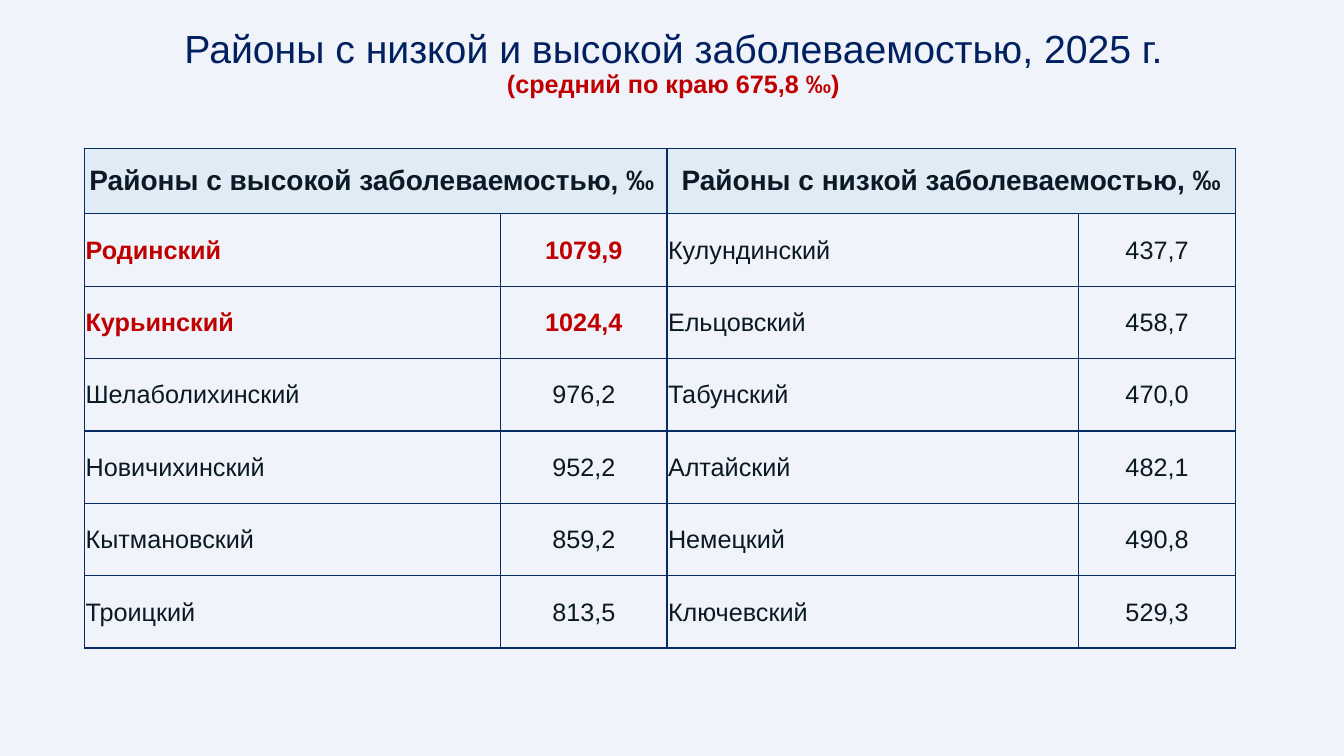
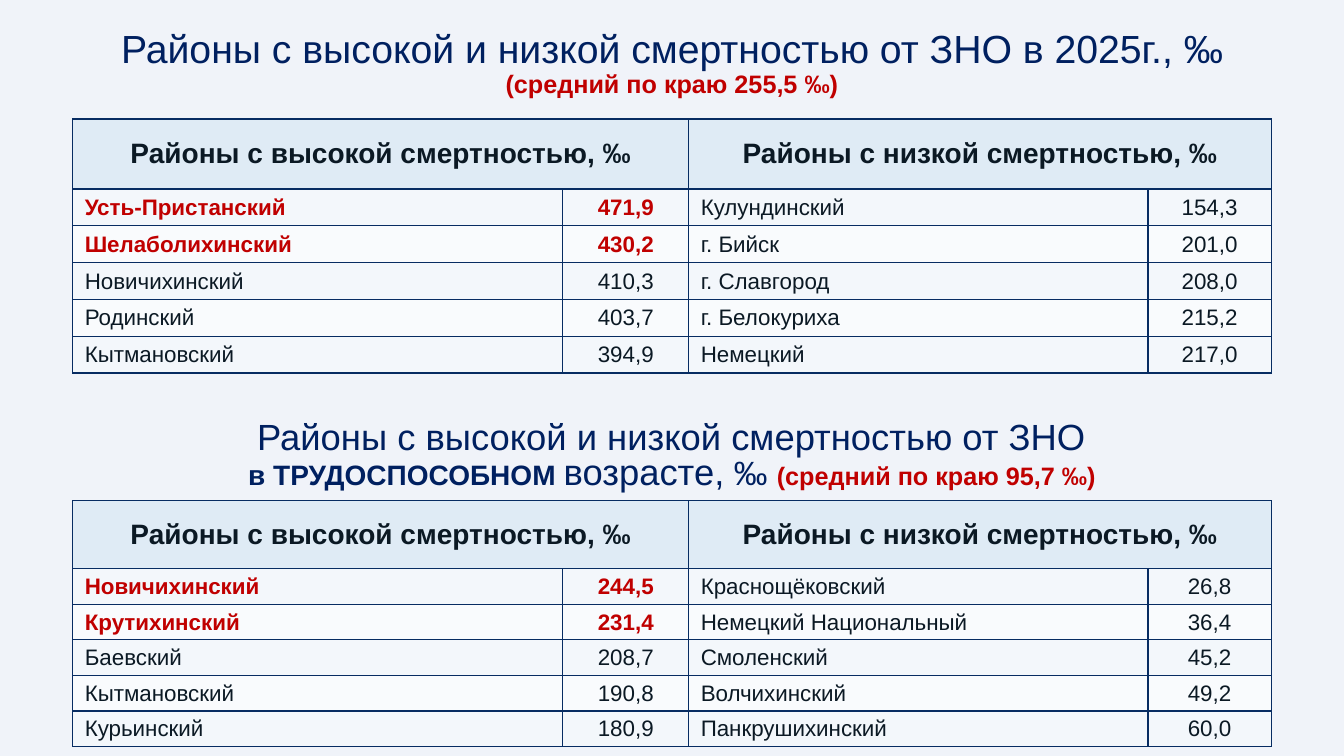
from lxml import etree
from pptx import Presentation
from pptx.dml.color import RGBColor
from pptx.enum.text import MSO_ANCHOR, MSO_AUTO_SIZE, PP_ALIGN
from pptx.oxml.ns import qn
from pptx.util import Pt

CENTER, LEFT = PP_ALIGN.CENTER, PP_ALIGN.LEFT
MIDDLE, TOP = MSO_ANCHOR.MIDDLE, MSO_ANCHOR.TOP
NO_AUTOFIT = MSO_AUTO_SIZE.NONE
TITLE_ONLY = 5

FONT = "Arial"
BACKGROUND, NAVY, RED, INK = "F0F3F9", "002060", "C00000", "0B1924"
BORDER, HEADER_FILL = "072C62", "DFEBF5"
BANDS = ("F3F7FB", "F9FBFD")
HIGHLIGHTED_ROWS = 2

TITLE = {"size": Pt(28), "bold": False, "color": NAVY}
SUBTITLE = {"size": Pt(18), "bold": True, "color": RED}
HEADER = {"size": Pt(20), "bold": True, "color": INK}

INCIDENCE_COLUMNS = (297, 119, 294, 112)
MORTALITY_COLUMNS = (350, 90, 328, 88)
MORTALITY_HEADERS = ("Районы с высокой смертностью, ‰", "Районы с низкой смертностью, ‰")

INCIDENCE = (
    ("Родинский", "1079,9", "Кулундинский", "437,7"),
    ("Курьинский", "1024,4", "Ельцовский", "458,7"),
    ("Шелаболихинский", "976,2", "Табунский", "470,0"),
    ("Новичихинский", "952,2", "Алтайский", "482,1"),
    ("Кытмановский", "859,2", "Немецкий", "490,8"),
    ("Троицкий", "813,5", "Ключевский", "529,3"),
)
MORTALITY = (
    ("Усть-Пристанский", "471,9", "Кулундинский", "154,3"),
    ("Шелаболихинский", "430,2", "г. Бийск", "201,0"),
    ("Новичихинский", "410,3", "г. Славгород", "208,0"),
    ("Родинский", "403,7", "г. Белокуриха", "215,2"),
    ("Кытмановский", "394,9", "Немецкий", "217,0"),
)
WORKING_AGE_MORTALITY = (
    ("Новичихинский", "244,5", "Краснощёковский", "26,8"),
    ("Крутихинский", "231,4", "Немецкий Национальный", "36,4"),
    ("Баевский", "208,7", "Смоленский", "45,2"),
    ("Кытмановский", "190,8", "Волчихинский", "49,2"),
    ("Курьинский", "180,9", "Панкрушихинский", "60,0"),
)


def set_color(color_format, value):
    """Apply a hex colour to a font or fill colour."""
    color_format.rgb = RGBColor.from_string(value)


def set_attributes(target, values):
    """Set each named attribute on the target."""
    for name, value in values.items():
        setattr(target, name, value)


def add_run(paragraph, text, style):
    """Append a run in the given style."""
    run = paragraph.add_run()
    run.text = text
    values = {"name": FONT, **style}
    set_color(run.font.color, values.pop("color"))
    set_attributes(run.font, values)


def add_title(slide, left, width, text, subtitle):
    """Place the title with its red regional average below."""
    shape = slide.shapes.title
    set_attributes(shape, {"left": Pt(left), "top": Pt(15), "width": Pt(width), "height": Pt(68)})
    set_attributes(shape.text_frame, {
        "word_wrap": True, "auto_size": NO_AUTOFIT,
        "vertical_anchor": TOP, "margin_top": Pt(6),
    })
    paragraph = shape.text_frame.paragraphs[0]
    set_attributes(paragraph, {"alignment": CENTER, "line_spacing": 0.9})
    add_run(paragraph, text, TITLE)
    paragraph.add_line_break()
    add_run(paragraph, subtitle, SUBTITLE)


def add_heading(slide, left, top, width, height, lines):
    """Add a centred heading whose lines are lists of styled runs."""
    frame = slide.shapes.add_textbox(Pt(left), Pt(top), Pt(width), Pt(height)).text_frame
    set_attributes(frame, {"word_wrap": True, "vertical_anchor": MIDDLE})
    for index, runs in enumerate(lines):
        paragraph = frame.add_paragraph() if index else frame.paragraphs[0]
        set_attributes(paragraph, {"alignment": CENTER, "line_spacing": 0.79})
        for text, style in runs:
            add_run(paragraph, text, style)


def set_borders(cell):
    """Draw a thin border on all four sides of a cell."""
    properties = cell._tc.get_or_add_tcPr()
    for index, side in enumerate(("lnL", "lnR", "lnT", "lnB")):
        line = etree.Element(qn(f"a:{side}"), w=str(Pt(1)))
        fill = etree.SubElement(line, qn("a:solidFill"))
        etree.SubElement(fill, qn("a:srgbClr"), val=BORDER)
        properties.insert(index, line)


def format_cell(cell, fill, margins):
    """Set fill, margins, anchor and borders of a cell."""
    if fill:
        cell.fill.solid()
        set_color(cell.fill.fore_color, fill)
    else:
        cell.fill.background()
    sides = ("margin_left", "margin_top", "margin_right", "margin_bottom")
    set_attributes(cell, dict(zip(sides, map(Pt, margins))))
    cell.vertical_anchor = MIDDLE
    set_borders(cell)


def write_cell(cell, text, style, alignment):
    """Write one aligned run in a cell."""
    paragraph = cell.text_frame.paragraphs[0]
    paragraph.alignment = alignment
    add_run(paragraph, text, style)


def add_district_table(slide, left, top, columns, header_height, row_height,
                       headers, rows, size, name_margin, bands):
    """Add a table of high-rate and low-rate districts side by side."""
    height = header_height + row_height * len(rows)
    table = slide.shapes.add_table(
        len(rows) + 1, len(columns), Pt(left), Pt(top), Pt(sum(columns)), Pt(height)).table
    set_attributes(table, {"first_row": False, "horz_banding": False})
    for column, width in zip(table.columns, columns):
        column.width = Pt(width)
    for index, row in enumerate(table.rows):
        row.height = Pt(row_height if index else header_height)

    for column in range(len(columns)):
        format_cell(table.cell(0, column), HEADER_FILL, (3, 0, 3, 0))
    for index, text in enumerate(headers):
        first = table.cell(0, 2 * index)
        first.merge(table.cell(0, 2 * index + 1))
        write_cell(first, text, HEADER, CENTER)

    for row, values in enumerate(rows):
        for column, text in enumerate(values):
            cell = table.cell(row + 1, column)
            is_name = column % 2 == 0
            highlighted = row < HIGHLIGHTED_ROWS and column < 2
            style = {"size": Pt(size), "bold": highlighted, "color": RED if highlighted else INK}
            margin = name_margin if is_name else 0.7
            format_cell(cell, bands[row % len(bands)], (margin, 0.7, 0.7, 0))
            write_cell(cell, text, style, LEFT if is_name else CENTER)


def add_incidence_slide(presentation):
    """Build the slide on incidence by district."""
    slide = presentation.slides.add_slide(presentation.slide_layouts[TITLE_ONLY])
    add_title(slide, 83, 796, "Районы с низкой и высокой заболеваемостью, 2025 г.",
              "(средний по краю 675,8 ‰)")
    headers = ("Районы с высокой заболеваемостью, ‰ ", "Районы с низкой заболеваемостью, ‰")
    add_district_table(slide, 60.5, 105.8, INCIDENCE_COLUMNS, 47, 51.7,
                       headers, INCIDENCE, 18, 0.7, (None,))


def add_mortality_slide(presentation):
    """Build the slide on mortality overall and at working age."""
    slide = presentation.slides.add_slide(presentation.slide_layouts[TITLE_ONLY])
    add_title(slide, 15, 930, "Районы с высокой и низкой смертностью от ЗНО в 2025г., ‰",
              "(средний по краю 255,5 ‰)")
    for top, header_height, row_height, rows in (
        (85, 50, 26.3, MORTALITY),
        (357.8, 48.5, 25.4, WORKING_AGE_MORTALITY),
    ):
        add_district_table(slide, 52, top, MORTALITY_COLUMNS, header_height, row_height,
                           MORTALITY_HEADERS, rows, 16, 8.6, BANDS)
    large = {**TITLE, "size": Pt(26)}
    add_heading(slide, 52, 298, 856, 57.6, (
        [("Районы с высокой и низкой смертностью от ЗНО", large)],
        [("в ТРУДОСПОСОБНОМ ", {**HEADER, "color": NAVY}),
         ("возрасте,", large),
         (" ‰ ", {**TITLE, "size": Pt(24)}),
         ("(средний по краю 95,7 ‰)", SUBTITLE)],
    ))


def main():
    """Create the presentation and save it."""
    presentation = Presentation()
    set_attributes(presentation, {"slide_width": Pt(960), "slide_height": Pt(540)})
    background = presentation.slide_master.background.fill
    background.solid()
    set_color(background.fore_color, BACKGROUND)
    add_incidence_slide(presentation)
    add_mortality_slide(presentation)
    presentation.save("out.pptx")


if __name__ == "__main__":
    main()
